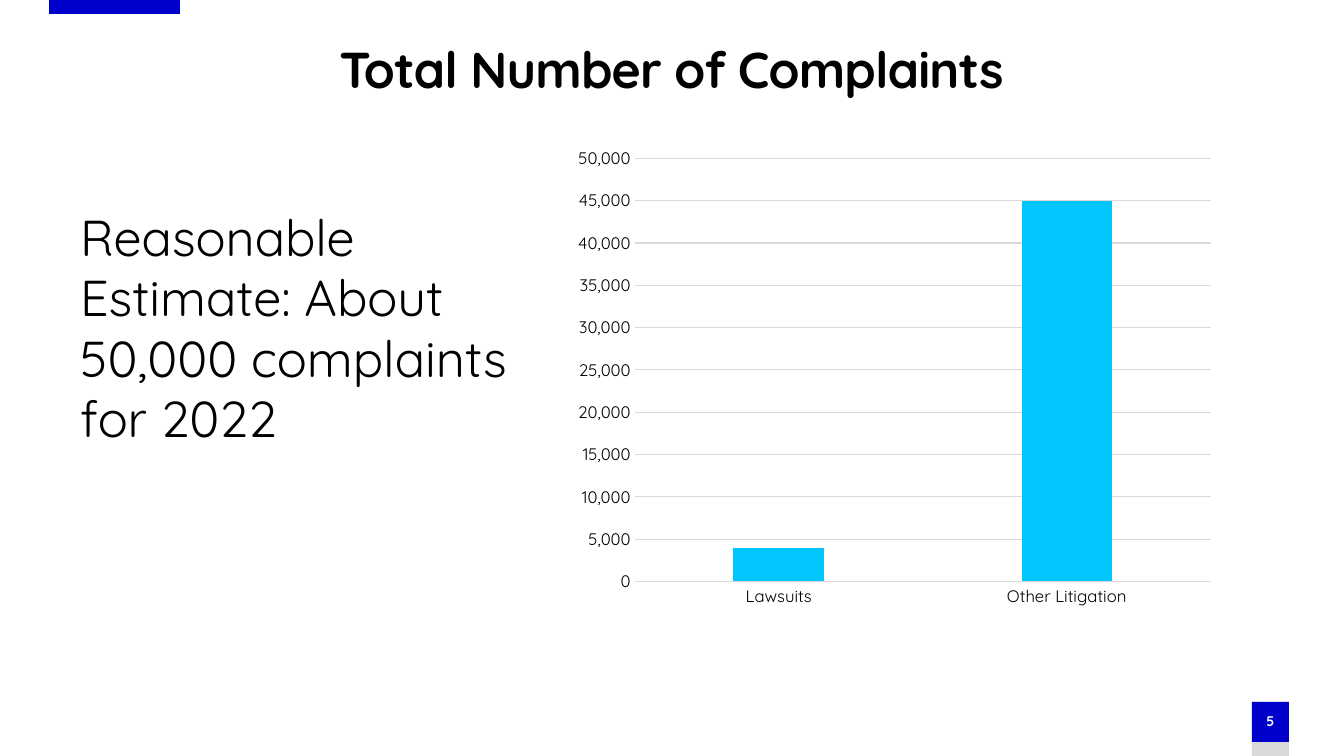
from dataclasses import dataclass, field

from lxml import etree
from pptx import Presentation
from pptx.chart.data import CategoryChartData
from pptx.dml.color import RGBColor
from pptx.enum.chart import XL_CHART_TYPE as ChartType, XL_TICK_MARK as TickMark
from pptx.enum.shapes import MSO_SHAPE as ShapeKind
from pptx.enum.text import MSO_ANCHOR as Anchor, PP_ALIGN as Align
from pptx.oxml.ns import qn
from pptx.slide import Slide
from pptx.util import Emu, Pt

EMU_PER_INCH = 914400
PX_PER_INCH = 100.8
FONT = "Quicksand"
COLORS = {
    "blue": "0000CD",
    "gray": "D9D9D9",
    "cyan": "01C6FD",
    "black": "000000",
    "white": "FFFFFF",
}
COMPLAINTS = {"Lawsuits": 4000, "Other Litigation": 45000}
PLOT_AREA = {"x": 0.084, "y": 0.015, "w": 0.888, "h": 0.915}


def px(length: int) -> Emu:
    return Emu(round(length * EMU_PER_INCH / PX_PER_INCH))


def color(name: str) -> RGBColor:
    return RGBColor.from_string(COLORS[name])


@dataclass(frozen=True)
class Box:
    left: int
    top: int
    width: int
    height: int

    def emu(self) -> tuple[Emu, ...]:
        return tuple(px(n) for n in (self.left, self.top, self.width, self.height))


@dataclass(frozen=True)
class Bar:
    box: Box
    fill: str


@dataclass(frozen=True)
class Label:
    text: str
    box: Box
    size: int
    color: str = "black"
    bold: bool = False
    tracking: int = 0
    frame: dict = field(default_factory=dict)
    paragraph: dict = field(default_factory=dict)


BARS = [
    Bar(Box(1252, 702, 37, 54), "gray"),
    Bar(Box(1252, 702, 37, 40), "blue"),
    Bar(Box(49, 0, 131, 14), "blue"),
]
LABELS = [
    Label(
        "5", Box(1252, 702, 37, 40), 10, "white", bold=True,
        frame={"vertical_anchor": Anchor.MIDDLE, "margin_left": 0, "margin_right": 0},
        paragraph={"alignment": Align.CENTER, "line_spacing": 0.9, "space_before": Pt(10)},
    ),
    Label(
        "Total Number of Complaints", Box(80, 48, 1183, 48), 36, bold=True, tracking=-60,
        frame={"vertical_anchor": Anchor.MIDDLE},
        paragraph={"alignment": Align.CENTER, "line_spacing": 0.9},
    ),
    Label(
        "Reasonable Estimate: About 50,000 complaints for 2022", Box(80, 206, 428, 305), 36,
        frame={f"margin_{side}": 0 for side in ("left", "top", "right", "bottom")},
    ),
]
CHART_BOX = Box(578, 148, 651, 466)


def set_all(target: object, values: dict) -> None:
    for name, value in values.items():
        setattr(target, name, value)


def style_font(font, size: int, color_name: str, bold: bool = False) -> None:
    set_all(font, {"name": FONT, "size": Pt(size), "bold": bold})
    font.color.rgb = color(color_name)


def style_line(line, color_name: str) -> None:
    line.color.rgb = color(color_name)
    line.width = Pt(0.75)


def add_bar(slide: Slide, bar: Bar) -> None:
    shape = slide.shapes.add_shape(ShapeKind.RECTANGLE, *bar.box.emu())
    shape.shadow.inherit = False
    shape.fill.solid()
    shape.fill.fore_color.rgb = color(bar.fill)
    shape.line.fill.background()


def add_label(slide: Slide, label: Label) -> None:
    frame = slide.shapes.add_textbox(*label.box.emu()).text_frame
    set_all(frame, {"word_wrap": True, **label.frame})
    paragraph = frame.paragraphs[0]
    set_all(paragraph, label.paragraph)
    run = paragraph.add_run()
    run.text = label.text
    style_font(run.font, label.size, label.color, label.bold)
    if label.tracking:
        run.font._element.set("spc", str(label.tracking))


def fix_plot_area(chart) -> None:
    """Pin the inner plot area to fractions of the chart."""
    plot_area = chart._chartSpace.chart.plotArea
    for old_layout in plot_area.findall(qn("c:layout")):
        plot_area.remove(old_layout)
    layout = etree.Element(qn("c:layout"))
    manual = etree.SubElement(layout, qn("c:manualLayout"))
    settings = {
        "layoutTarget": "inner", "xMode": "edge", "yMode": "edge", **PLOT_AREA,
    }
    for name, value in settings.items():
        etree.SubElement(manual, qn(f"c:{name}")).set("val", str(value))
    plot_area.insert(0, layout)


def add_complaints_chart(slide: Slide) -> None:
    data = CategoryChartData(number_format="#,##0")
    data.categories = list(COMPLAINTS)
    data.add_series("Series 1", list(COMPLAINTS.values()))
    chart = slide.shapes.add_chart(
        ChartType.COLUMN_CLUSTERED, *CHART_BOX.emu(), data
    ).chart
    set_all(chart, {"has_legend": False, "has_title": False})
    style_font(chart.font, 10, "black")

    plot = chart.plots[0]
    set_all(plot, {"gap_width": 219, "overlap": -27, "vary_by_categories": False})
    fill = plot.series[0].format.fill
    fill.solid()
    fill.fore_color.rgb = color("cyan")

    for axis in (chart.category_axis, chart.value_axis):
        set_all(axis, {"major_tick_mark": TickMark.NONE, "minor_tick_mark": TickMark.NONE})
        style_font(axis.tick_labels.font, 12, "black")
    style_line(chart.category_axis.format.line, "gray")

    value_axis = chart.value_axis
    set_all(value_axis, {"minimum_scale": 0, "maximum_scale": 50000, "major_unit": 5000})
    set_all(value_axis.tick_labels, {"number_format": "#,##0", "number_format_is_linked": False})
    value_axis.format.line.fill.background()
    style_line(value_axis.major_gridlines.format.line, "gray")
    fix_plot_area(chart)


def main() -> None:
    presentation = Presentation()
    set_all(presentation, {"slide_width": px(1344), "slide_height": px(756)})
    slide = presentation.slides.add_slide(presentation.slide_layouts[6])
    slide.background.fill.solid()
    slide.background.fill.fore_color.rgb = color("white")
    for bar in BARS:
        add_bar(slide, bar)
    for label in LABELS:
        add_label(slide, label)
    add_complaints_chart(slide)
    presentation.save("out.pptx")


if __name__ == "__main__":
    main()
